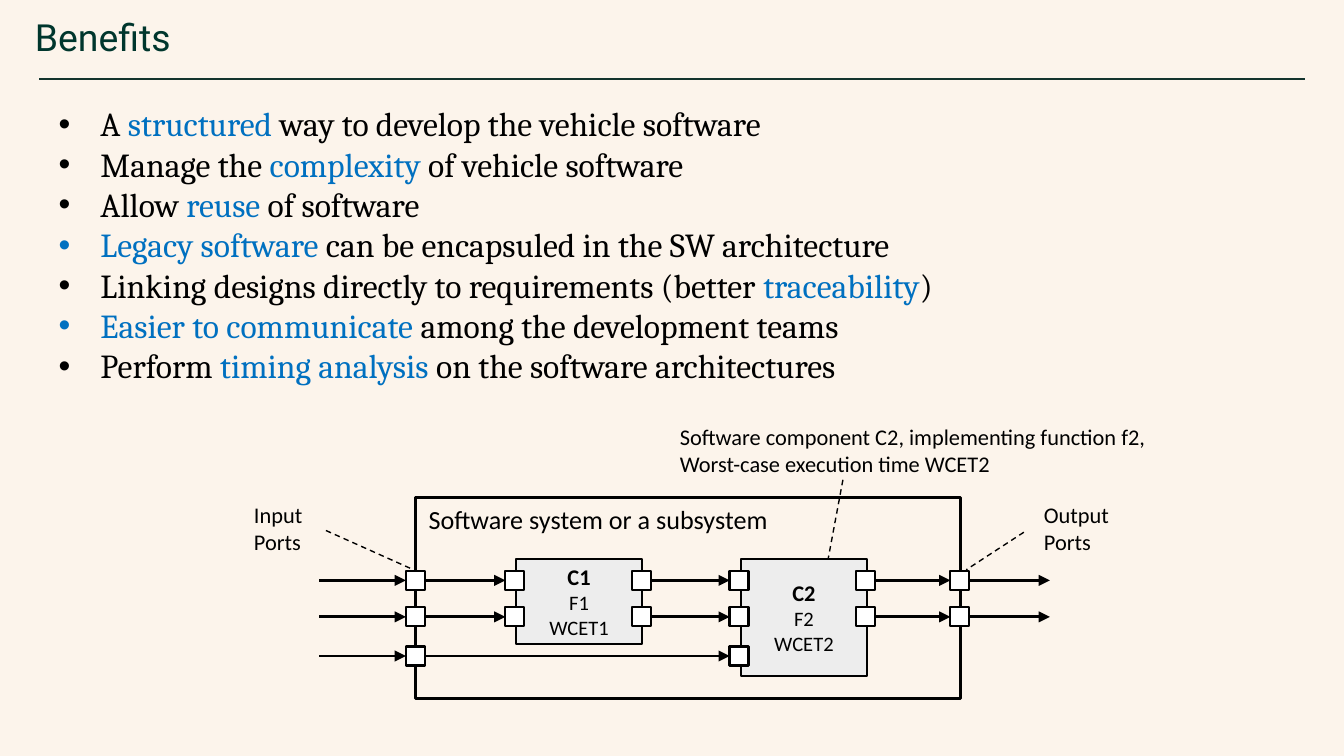
"""Build the Benefits slide with its component diagram."""
from dataclasses import dataclass

from lxml import etree
from pptx import Presentation
from pptx.dml.color import RGBColor
from pptx.enum.dml import MSO_LINE
from pptx.enum.shapes import MSO_CONNECTOR, MSO_SHAPE
from pptx.enum.text import MSO_ANCHOR, MSO_AUTO_SIZE, PP_ALIGN
from pptx.oxml.ns import qn
from pptx.util import Cm, Pt

STRAIGHT = MSO_CONNECTOR.STRAIGHT
RECTANGLE = MSO_SHAPE.RECTANGLE
DASH = MSO_LINE.DASH
TOP, MIDDLE = MSO_ANCHOR.TOP, MSO_ANCHOR.MIDDLE
LEFT, CENTER = PP_ALIGN.LEFT, PP_ALIGN.CENTER
GROW, FIXED = MSO_AUTO_SIZE.SHAPE_TO_FIT_TEXT, MSO_AUTO_SIZE.NONE
LEFT_SITE, RIGHT_SITE = 1, 3

COLOURS = {
    "background": "FCF4EB", "title": "00362D", "rule": "13342D",
    "ink": "000000", "accent": "0070C0", "component": "EDEDED", "port": "FFFFFF",
}
BENEFITS = (
    "A *structured* way to develop the vehicle software",
    "Manage the *complexity* of vehicle software",
    "Allow *reuse* of software",
    "*Legacy software *can be encapsuled in the SW architecture",
    "Linking designs directly to requirements (better *traceability*)",
    "*Easier to communicate *among the development teams",
    "Perform *timing analysis *on the software architectures",
)
PORT_SIZE = 0.36
PORT_ROWS = (10.97, 11.66, 12.4)
PORT_COLUMNS = {
    "system in": (7.67, 3), "C1 in": (9.55, 2), "C1 out": (11.94, 2),
    "C2 in": (13.79, 3), "C2 out": (16.18, 2), "system out": (17.96, 2),
}
LINKS = (
    ("system in", "C1 in", (0, 1)), ("C1 out", "C2 in", (0, 1)),
    ("system in", "C2 in", (2,)), ("C2 out", "system out", (0, 1)),
)
INPUT_START, OUTPUT_END = 6.03, 19.84


@dataclass(frozen=True)
class Area:
    left: float
    top: float
    width: float
    height: float

    def lengths(self):
        return Cm(self.left), Cm(self.top), Cm(self.width), Cm(self.height)


@dataclass(frozen=True)
class Component:
    area: Area
    lines: tuple


@dataclass(frozen=True)
class Label:
    area: Area
    lines: tuple
    wrap: bool


SYSTEM = Area(7.85, 9.4, 10.31, 3.81)
COMPONENTS = (
    Component(Area(9.75, 10.57, 2.39, 1.6), ("C1", "F1", "WCET1")),
    Component(Area(14, 10.57, 2.39, 2.21), ("C2", "F2", "WCET2")),
)
LABELS = (
    Label(Area(19.48, 9.35, 1.85, 1.27), ("Output", "Ports"), False),
    Label(Area(4.55, 9.35, 1.57, 1.27), ("Input", "Ports"), False),
    Label(Area(12.6, 7.87, 10.16, 1.27),
          ("Software component C2, implementing function f2, "
           "Worst-case execution time WCET2",), True),
)
LEADERS = (
    (7.75, 10.74, 6.12, 10.01),
    (19.35, 10.06, 18.26, 10.77),
    (15.93, 9.07, 15.65, 10.57),
)


def rgb(name: str) -> RGBColor:
    return RGBColor.from_string(COLOURS[name])


def write_para(frame, text: str, *, size: float, font="Calibri", colour="ink",
               bold=False, align=LEFT, spacing=None, bullet=False) -> None:
    para = frame.paragraphs[0]
    if para.runs:
        para = frame.add_paragraph()
    para.alignment = align
    if spacing:
        para.line_spacing = spacing
    if bullet:
        properties = para._p.get_or_add_pPr()
        properties.set("marL", str(Cm(0.79)))
        properties.set("indent", str(Cm(-0.79)))
        etree.SubElement(properties, qn("a:buFont"), typeface="Arial")
        etree.SubElement(properties, qn("a:buChar"), char="•")
    for index, part in enumerate(text.split("*")):
        if part:
            span = para.add_run()
            span.text = part
            span.font.name = font
            span.font.size = Pt(size)
            span.font.bold = bold
            span.font.color.rgb = rgb("accent" if index % 2 else colour)


def add_text_box(page, area: Area, *, wrap=True, anchor=TOP, fit=GROW):
    frame = page.shapes.add_textbox(*area.lengths()).text_frame
    frame.word_wrap = wrap
    frame.auto_size = fit
    frame.vertical_anchor = anchor
    return frame


def add_box(page, area: Area, *, weight: float, fill=None):
    box = page.shapes.add_shape(RECTANGLE, *area.lengths())
    box.shadow.inherit = False
    if fill:
        box.fill.solid()
        box.fill.fore_color.rgb = rgb(fill)
    else:
        box.fill.background()
    box.line.color.rgb = rgb("ink")
    box.line.width = Pt(weight)
    return box


def add_line(page, start_x: float, start_y: float, end_x: float, end_y: float, *,
             weight: float, colour="ink", dashed=False, arrow=False):
    line = page.shapes.add_connector(
        STRAIGHT, Cm(start_x), Cm(start_y), Cm(end_x), Cm(end_y))
    line.line.color.rgb = rgb(colour)
    line.line.width = Pt(weight)
    if dashed:
        line.line.dash_style = DASH
    if arrow:
        etree.SubElement(line.line._get_or_add_ln(), qn("a:tailEnd"), type="triangle")
    etree.SubElement(line._element.spPr, qn("a:effectLst"))
    return line


def add_component(page, component: Component) -> None:
    frame = add_box(page, component.area, weight=1, fill="component").text_frame
    frame.vertical_anchor = MIDDLE
    name, *details = component.lines
    write_para(frame, name, size=12, bold=True, align=CENTER)
    for detail in details:
        write_para(frame, detail, size=11, align=CENTER)


def add_ports(page) -> dict:
    return {
        (name, row): add_box(
            page, Area(left, PORT_ROWS[row] - PORT_SIZE / 2, PORT_SIZE, PORT_SIZE),
            weight=1.25, fill="port")
        for name, (left, count) in PORT_COLUMNS.items() for row in range(count)
    }


def add_flow(page, row: int, *, source=None, target=None) -> None:
    height = PORT_ROWS[row]
    arrow = add_line(page, INPUT_START, height, OUTPUT_END, height, weight=1.5, arrow=True)
    if source:
        arrow.begin_connect(source, RIGHT_SITE)
    if target:
        arrow.end_connect(target, LEFT_SITE)


def add_diagram(page) -> None:
    frame = add_box(page, SYSTEM, weight=1.5).text_frame
    frame.vertical_anchor = TOP
    write_para(frame, "Software system or a subsystem", size=14)
    for component in COMPONENTS:
        add_component(page, component)
    ports = add_ports(page)
    for source, target, rows in LINKS:
        for row in rows:
            add_flow(page, row, source=ports[source, row], target=ports[target, row])
    for (name, row), port in ports.items():
        if name == "system in":
            add_flow(page, row, target=port)
        elif name == "system out":
            add_flow(page, row, source=port)
    for label in LABELS:
        frame = add_text_box(page, label.area, wrap=label.wrap)
        for text in label.lines:
            write_para(frame, text, size=12)
    for leader in LEADERS:
        add_line(page, *leader, weight=0.75, dashed=True)


def main() -> None:
    deck = Presentation()
    deck.slide_width, deck.slide_height = Cm(25.4), Cm(14.29)
    page = deck.slides.add_slide(deck.slide_layouts[6])
    page.background.fill.solid()
    page.background.fill.fore_color.rgb = rgb("background")
    add_line(page, 0.74, 1.5, 24.66, 1.5, weight=1, colour="rule")
    title = add_text_box(page, Area(0.41, -0.48, 21.39, 2.46), anchor=MIDDLE, fit=FIXED)
    write_para(title, "Benefits", size=20, font="Roboto", colour="title", spacing=0.9)
    benefits = add_text_box(page, Area(0.86, 1.83, 23.7, 5.64))
    for text in BENEFITS:
        write_para(benefits, text, size=18, font="Cambria", bullet=True)
    add_diagram(page)
    deck.save("out.pptx")


if __name__ == "__main__":
    main()
